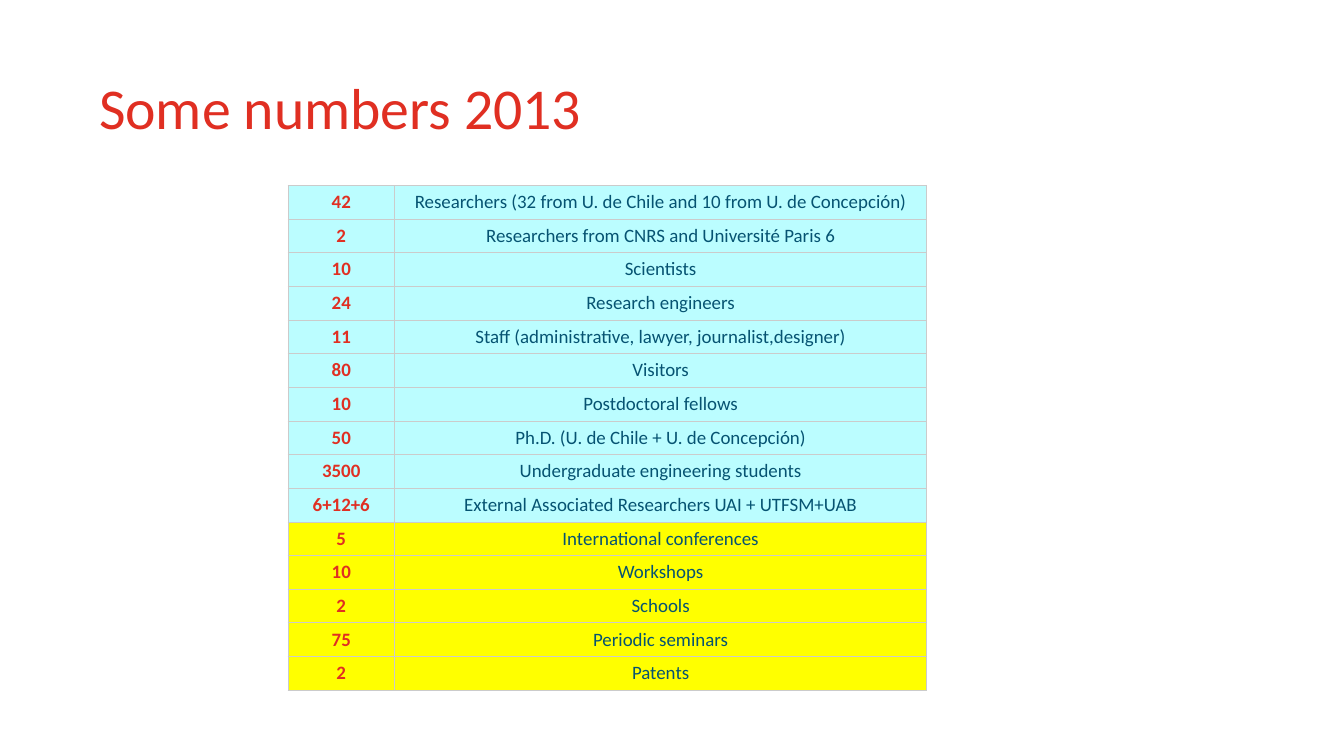
from lxml import etree
from pptx import Presentation
from pptx.dml.color import RGBColor
from pptx.enum.text import MSO_ANCHOR as Anchor, PP_ALIGN as Align
from pptx.oxml.ns import qn
from pptx.util import Inches, Pt

RED, BLUE, GREY = "E02F22", "065372", "CBCBCB"
CYAN, YELLOW = "BBFDFF", "FFFF00"

PEOPLE = [
    ("42", "Researchers (32 from U. de Chile and 10 from U. de Concepción)"),
    ("2", "Researchers from CNRS and Université Paris 6"),
    ("10", "Scientists"),
    ("24", "Research engineers"),
    ("11", "Staff (administrative, lawyer, journalist,designer)"),
    ("80", "Visitors"),
    ("10", "Postdoctoral fellows"),
    ("50", "Ph.D. (U. de Chile + U. de Concepción)"),
    ("3500", "Undergraduate engineering students"),
    ("6+12+6", "External Associated Researchers UAI + UTFSM+UAB"),
]
ACTIVITIES = [
    ("5", "International conferences"),
    ("10", "Workshops"),
    ("2", "Schools"),
    ("75", "Periodic seminars"),
    ("2", "Patents"),
]


def rgb(value):
    return RGBColor.from_string(value)


def set_insets(target, inset):
    for side in ("left", "right", "top", "bottom"):
        setattr(target, f"margin_{side}", Inches(inset))


def format_run(paragraph, size, color, bold=False):
    font = paragraph.runs[0].font
    font.name, font.size, font.bold = "Calibri", Pt(size), bold
    font.color.rgb = rgb(color)


def add_borders(cell, color, width):
    properties = cell._tc.get_or_add_tcPr()
    for position, side in enumerate(("lnL", "lnR", "lnT", "lnB")):
        line = etree.Element(qn(f"a:{side}"), w=str(Pt(width)))
        fill = etree.SubElement(line, qn("a:solidFill"))
        etree.SubElement(fill, qn("a:srgbClr"), val=color)
        properties.insert(position, line)  # borders come before the fill


def fill_cell(cell, text, background, color, bold, inset):
    cell.text_frame.text = text
    cell.vertical_anchor = Anchor.MIDDLE
    set_insets(cell, inset)
    cell.fill.solid()
    cell.fill.fore_color.rgb = rgb(background)
    paragraph = cell.text_frame.paragraphs[0]
    paragraph.alignment = Align.CENTER
    for side in ("marL", "marR"):
        paragraph._p.get_or_add_pPr().set(side, str(Inches(0.06)))
    format_run(paragraph, 18, color, bold)
    add_borders(cell, GREY, 0.75)


def add_title(slide, text):
    title = slide.shapes.title
    title.left, title.top = Inches(1.27), Inches(0.27)
    title.width, title.height = Inches(14.15), Inches(1.64)
    frame = title.text_frame
    frame.text = text
    frame.word_wrap = True
    frame.vertical_anchor = Anchor.BOTTOM
    set_insets(frame, 0.04)
    frame.paragraphs[0].alignment = Align.LEFT
    format_run(frame.paragraphs[0], 55, RED)


def add_numbers_table(slide, groups):
    rows = [(entry, color) for entries, color in groups for entry in entries]
    table = slide.shapes.add_table(
        len(rows), 2, Inches(3.81), Inches(2.45), Inches(8.45), Inches(6.68)
    ).table
    for column, width in zip(table.columns, (1.41, 7.04)):
        column.width = Inches(width)
    for index, ((count, label), background) in enumerate(rows):
        fill_cell(table.cell(index, 0), count, background, RED, True, 0.06)
        # The long first label needs the full cell width
        label_inset = 0 if index == 0 else 0.06
        fill_cell(table.cell(index, 1), label, background, BLUE, False, label_inset)


def main():
    deck = Presentation()
    deck.slide_width, deck.slide_height = Inches(17.78), Inches(10)
    slide = deck.slides.add_slide(deck.slide_layouts[5])

    # Heading
    add_title(slide, "Some numbers 2013")

    # People in cyan, activities in yellow
    add_numbers_table(slide, [(PEOPLE, CYAN), (ACTIVITIES, YELLOW)])

    deck.save("out.pptx")


if __name__ == "__main__":
    main()
